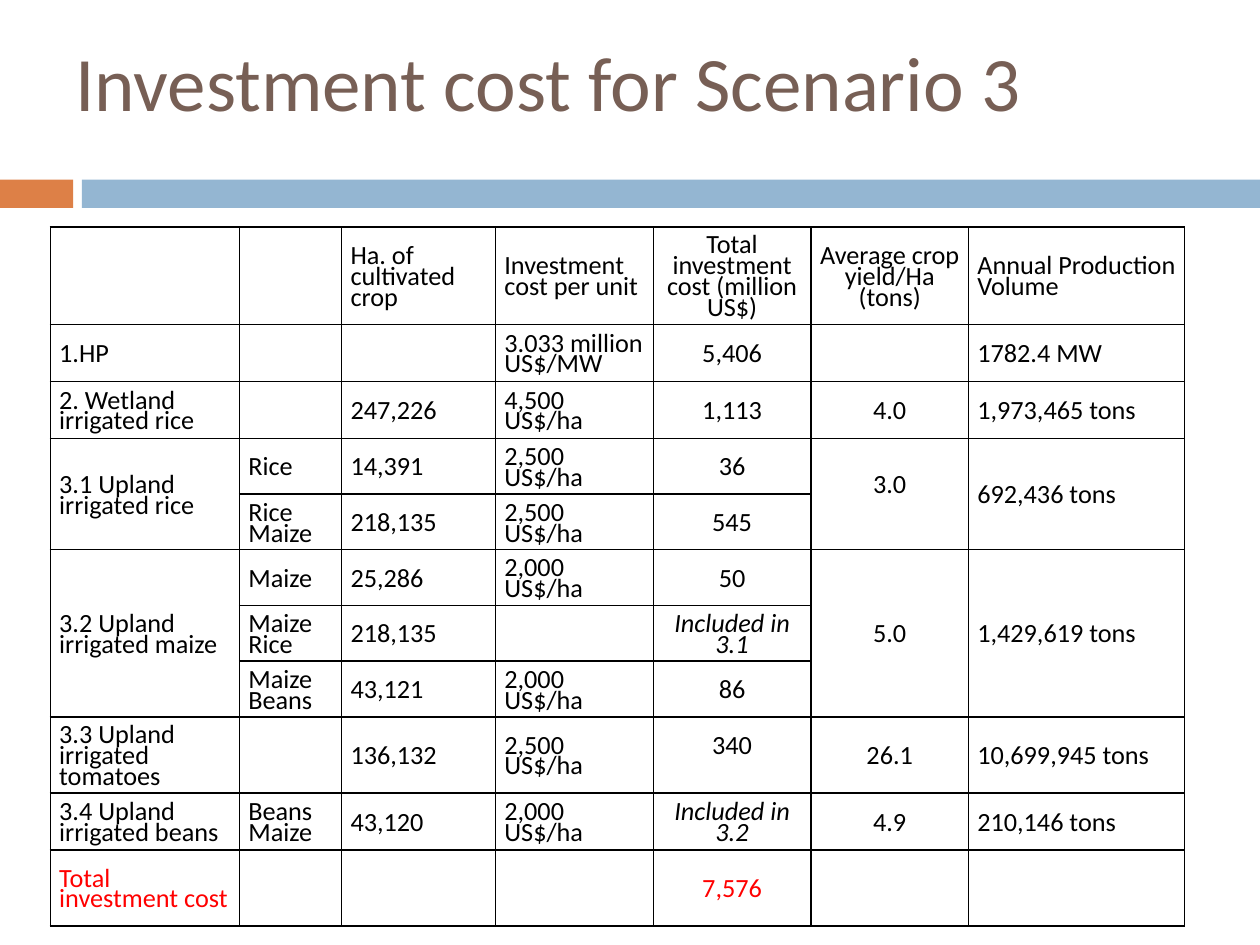
from lxml import etree
from pptx import Presentation
from pptx.dml.color import RGBColor
from pptx.enum.shapes import MSO_SHAPE
from pptx.enum.text import MSO_ANCHOR, PP_ALIGN
from pptx.oxml.ns import qn
from pptx.util import Inches, Pt

RECT = MSO_SHAPE.RECTANGLE
MIDDLE = MSO_ANCHOR.MIDDLE
LEFT, CENTER = PP_ALIGN.LEFT, PP_ALIGN.CENTER

ORANGE = RGBColor(0xDD, 0x80, 0x47)
BLUE = RGBColor(0x94, 0xB6, 0xD2)
BROWN = RGBColor(0x77, 0x5F, 0x55)
BLACK = RGBColor(0, 0, 0)
RED = RGBColor(0xFF, 0, 0)

FONT = "Calibri"
WIDE, HIGH = Inches(10), Inches(7.5)
LINE = Pt(12)
COLS = [1.5, 0.81, 1.22, 1.25, 1.25, 1.25, 1.71]
ROWS = [0.77, 0.45, 0.45] + [0.44] * 5 + [0.6, 0.45, 0.6]
MIDS = (4, 5)
SPANS = [(3, 0, 4), (3, 5, 4), (3, 6, 4), (5, 0, 7), (5, 5, 7), (5, 6, 7)]
RAISED = [(3, 5), (8, 4)]

DATA = [
    ["", "", "Ha. of cultivated crop", "Investment cost per unit",
     "Total investment cost (million US$)", "Average crop yield/Ha (tons)",
     "Annual Production Volume"],
    ["1.HP", "", "", "3.033 million US$/MW", "5,406", "", "1782.4 MW"],
    ["2. Wetland irrigated rice", "", "247,226", "4,500 US$/ha", "1,113",
     "4.0", "1,973,465 tons"],
    ["3.1 Upland irrigated rice", "Rice", "14,391", "2,500 US$/ha", "36",
     "3.0", "692,436 tons"],
    ["", "Rice\nMaize", "218,135", "2,500 US$/ha", "545", "", ""],
    ["3.2 Upland irrigated maize", "Maize", "25,286", "2,000 US$/ha", "50",
     "5.0", "1,429,619 tons"],
    ["", "Maize\nRice", "218,135", "", "Included in 3.1", "", ""],
    ["", "Maize\nBeans", "43,121", "2,000 US$/ha", "86", "", ""],
    ["3.3 Upland irrigated tomatoes", "", "136,132", "2,500 US$/ha", "340",
     "26.1", "10,699,945 tons"],
    ["3.4 Upland irrigated beans", "Beans\nMaize", "43,120", "2,000 US$/ha",
     "Included in 3.2", "4.9", "210,146 tons"],
    ["Total investment cost", "", "", "", "7,576", "", ""],
]


def share(x, y, w, h):
    return int(x * WIDE), int(y * HIGH), int(w * WIDE), int(h * HIGH)


def style(para, size, color):
    for run in para.runs:
        run.font.name = FONT
        run.font.size = Pt(size)
        run.font.color.rgb = color


def add_title(slide, box, text):
    frame = slide.shapes.add_textbox(*box).text_frame
    frame.word_wrap = True
    frame.vertical_anchor = MIDDLE
    frame.text = text
    style(frame.paragraphs[0], 44, BROWN)


def add_band(slide, box):
    x, y, w, h = box
    for start, size, color in ((0, 0.058, ORANGE), (0.065, 0.935, BLUE)):
        bar = slide.shapes.add_shape(
            RECT, x + int(start * w), y, int(size * w), h)
        bar.shadow.inherit = False
        bar.fill.solid()
        bar.fill.fore_color.rgb = color
        bar.line.fill.background()


def add_edges(cell):
    props = cell._tc.get_or_add_tcPr()
    for side in ("a:lnL", "a:lnR", "a:lnT", "a:lnB"):
        edge = etree.SubElement(props, qn(side), w=str(Pt(1)))
        fill = etree.SubElement(edge, qn("a:solidFill"))
        etree.SubElement(fill, qn("a:srgbClr"), val=str(BLACK))


def fill_cell(cell, text, align, color, raised):
    add_edges(cell)
    cell.fill.background()
    cell.vertical_anchor = MIDDLE
    cell.margin_left = cell.margin_right = Inches(0.07)
    cell.margin_top = Inches(0.1)
    cell.margin_bottom = LINE if raised else 0
    if not text:
        return
    cell.text_frame.text = text
    for para in cell.text_frame.paragraphs:
        para.alignment = align
        para.line_spacing = LINE
        style(para, 15, color)
        for run in para.runs:
            run.font.italic = text.startswith("Included")


def add_costs(slide, box):
    x, y, w, h = box
    table = slide.shapes.add_table(len(ROWS), len(COLS), x, y, w, h).table
    table.first_row = False
    table.horz_banding = False
    for col, part in zip(table.columns, COLS):
        col.width = int(w * part / sum(COLS))
    for row, part in zip(table.rows, ROWS):
        row.height = int(h * part / sum(ROWS))
    for r, line in enumerate(DATA):
        color = RED if r == len(DATA) - 1 else BLACK
        for c, text in enumerate(line):
            align = CENTER if c in MIDS else LEFT
            fill_cell(table.cell(r, c), text, align, color, (r, c) in RAISED)
    for top, col, end in SPANS:
        table.cell(top, col).merge(table.cell(end, col))


def main():
    deck = Presentation()
    deck.slide_width, deck.slide_height = WIDE, HIGH
    slide = deck.slides.add_slide(deck.slide_layouts[6])
    add_band(slide, share(0, 0.19, 1, 0.03))
    add_title(slide, share(0.05, 0, 0.9, 0.17), "Investment cost for Scenario 3")
    add_costs(slide, share(0.04, 0.24, 0.9, 0.74))
    deck.save("out.pptx")


if __name__ == "__main__":
    main()
